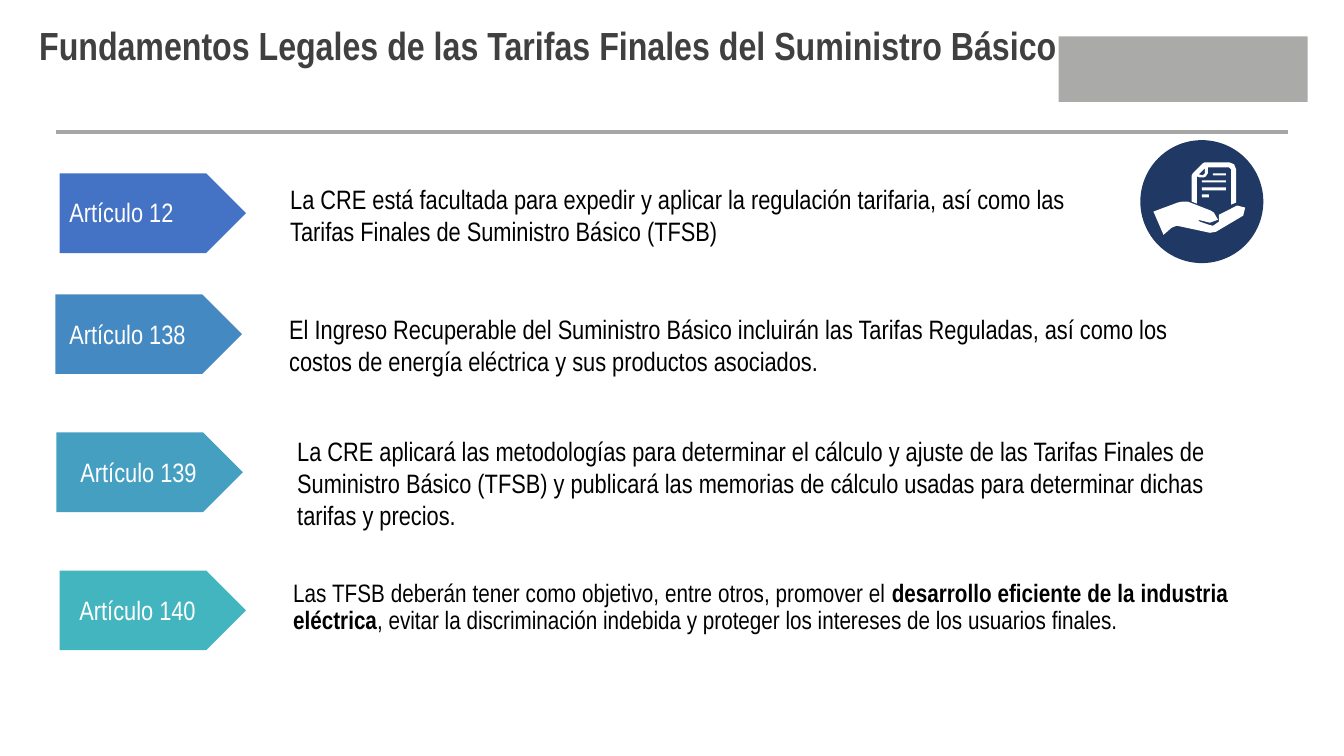
from lxml import etree
from pptx import Presentation
from pptx import util as u
from pptx.dml.color import RGBColor
from pptx.enum import shapes, text
from pptx.oxml import ns

PX = 9144  # EMU per px, 100 px to the inch
FONT = "Arial Narrow"

WHITE = RGBColor(0xFF, 0xFF, 0xFF)
BLACK = RGBColor(0x00, 0x00, 0x00)
TITLE_GRAY = RGBColor(0x40, 0x40, 0x40)
RULE_GRAY = RGBColor(0xA6, 0xA6, 0xA6)
MARK_GRAY = RGBColor(0xAA, 0xAA, 0xA9)
NAVY = RGBColor(0x20, 0x38, 0x64)
BLUE = RGBColor(0x44, 0x72, 0xC4)
SKY = RGBColor(0x44, 0x89, 0xC2)
CYAN = RGBColor(0x44, 0x9F, 0xC1)
TEAL = RGBColor(0x43, 0xB5, 0xBF)

TITLE = "Fundamentos Legales de las Tarifas Finales del Suministro Básico"
BODY = {"size": u.Pt(19), "color": BLACK}
LABEL = {"size": u.Pt(19), "color": WHITE}
HEADING = {"size": u.Pt(28), "color": TITLE_GRAY, "bold": True}
CLOSING = {"size": u.Pt(18), "color": BLACK}
JUSTIFIED = {"alignment": text.PP_ALIGN.JUSTIFY, "line_spacing": 0.9}

# Arrow box, arrow colour, label, label box, text box, runs, run format, paragraph format
ARTICLES = [
    ((59, 172), BLUE, "Artículo 12", (59, 189), (278, 177, 849, 74),
     ["La CRE está facultada para expedir y aplicar la regulación tarifaria, así como las "
      "Tarifas Finales de Suministro Básico (TFSB)"], BODY, {}),
    ((55, 292), SKY, "Artículo 138", (59, 310), (277, 306, 931, 74),
     ["El Ingreso Recuperable del Suministro Básico incluirán las Tarifas Reguladas, así como "
      "los costos de energía eléctrica y sus productos asociados."], BODY, {}),
    ((56, 429), CYAN, "Artículo 139", (70, 447), (285, 427, 944, 106),
     ["La CRE aplicará las metodologías para determinar el cálculo y ajuste de las Tarifas "
      "Finales de Suministro Básico (TFSB) y publicará las memorias de cálculo usadas para "
      "determinar dichas tarifas y precios."], BODY, {}),
    ((59, 566), TEAL, "Artículo 140", (69, 584), (281, 571, 947, 120),
     ["Las TFSB deberán tener como objetivo, entre otros, promover el ",
      "desarrollo eficiente de la industria eléctrica",
      ", evitar la discriminación indebida y proteger los intereses de los usuarios finales."],
     CLOSING, JUSTIFIED),
]

HAND = [
    (1154, 233), (1144, 210), (1168, 201), (1173, 200), (1178, 200), (1201, 209), (1204, 211),
    (1208, 218), (1200, 221), (1192, 219), (1188, 218), (1190, 220), (1199, 223), (1203, 224),
    (1209, 220), (1209, 213), (1227, 204), (1235, 206), (1233, 214), (1206, 230), (1200, 231),
    (1172, 225), (1167, 224), (1162, 226),
]
PAGE_EDGE = [
    (1198, 168), (1198, 166), (1219, 166), (1221, 168), (1221, 203), (1226, 201), (1226, 168),
    (1224, 163), (1219, 161), (1195, 161), (1193, 162), (1183, 172), (1182, 174), (1182, 200),
    (1187, 202), (1187, 175), (1190, 176), (1194, 176), (1196, 175), (1198, 172),
]
PAGE_FOLD = [(1195, 172), (1193, 174), (1189, 173), (1195, 167)]
PAGE_LINES = [(1203, 172, 13, 2), (1192, 179, 24, 2), (1192, 186, 24, 3), (1192, 193, 7, 3)]


def scaled(box):
    return [value * PX for value in box]


def paint(shape, color):
    shape.shadow.inherit = False
    shape.fill.solid()
    shape.fill.fore_color.rgb = color
    shape.line.fill.background()


def add_block(parent, kind, box, color):
    shape = parent.shapes.add_shape(kind, *scaled(box))
    paint(shape, color)


def add_outline(parent, contours, color):
    first, *others = contours
    builder = parent.shapes.build_freeform(*first[0], scale=PX)
    builder.add_line_segments(first[1:])
    for contour in others:
        builder.move_to(*contour[0])
        builder.add_line_segments(contour[1:])
    paint(builder.convert_to_shape(), color)


def add_text(slide, box, runs, run_format, paragraph_format):
    """Odd-numbered runs are the emphasised ones."""
    frame = slide.shapes.add_textbox(*scaled(box)).text_frame
    frame.word_wrap = True
    paragraph = frame.paragraphs[0]
    for name, value in paragraph_format.items():
        setattr(paragraph, name, value)
    for index, words in enumerate(runs):
        run = paragraph.add_run()
        run.text = words
        values = {"name": FONT, "bold": index % 2 == 1, **run_format}
        run.font.color.rgb = values.pop("color")
        for name, value in values.items():
            setattr(run.font, name, value)


def add_rule(slide, start, end, color, weight):
    connector = slide.shapes.add_connector(
        shapes.MSO_CONNECTOR.STRAIGHT, *scaled(start), *scaled(end))
    connector.line.color.rgb = color
    connector.line.width = u.Pt(weight)
    etree.SubElement(connector.element.spPr, ns.qn("a:effectLst"))


def add_icon(slide):
    icon = slide.shapes.add_group_shape()
    add_block(icon, shapes.MSO_SHAPE.OVAL, (1131, 139, 122, 122), NAVY)
    add_outline(icon, [HAND], WHITE)
    for box in PAGE_LINES:
        add_block(icon, shapes.MSO_SHAPE.RECTANGLE, box, WHITE)
    add_outline(icon, [PAGE_EDGE, PAGE_FOLD], WHITE)


def main():
    presentation = Presentation()
    presentation.slide_width, presentation.slide_height = scaled((1333, 750))
    slide = presentation.slides.add_slide(presentation.slide_layouts[6])

    # Header
    add_block(slide, shapes.MSO_SHAPE.RECTANGLE, (1050, 36, 247, 65), MARK_GRAY)
    add_rule(slide, (56, 131), (1277, 131), RULE_GRAY, 2.25)
    add_text(slide, (29, 21, 1032, 102), [TITLE], HEADING, JUSTIFIED)

    # Document held in a hand
    add_icon(slide)

    # Articles
    for arrow, color, label, label_at, box, runs, run_format, paragraph_format in ARTICLES:
        add_block(slide, shapes.MSO_SHAPE.PENTAGON, (*arrow, 185, 79), color)
        add_text(slide, (*label_at, 157, 42), [label], LABEL, {})
        add_text(slide, box, runs, run_format, paragraph_format)

    presentation.save("out.pptx")


if __name__ == "__main__":
    main()
